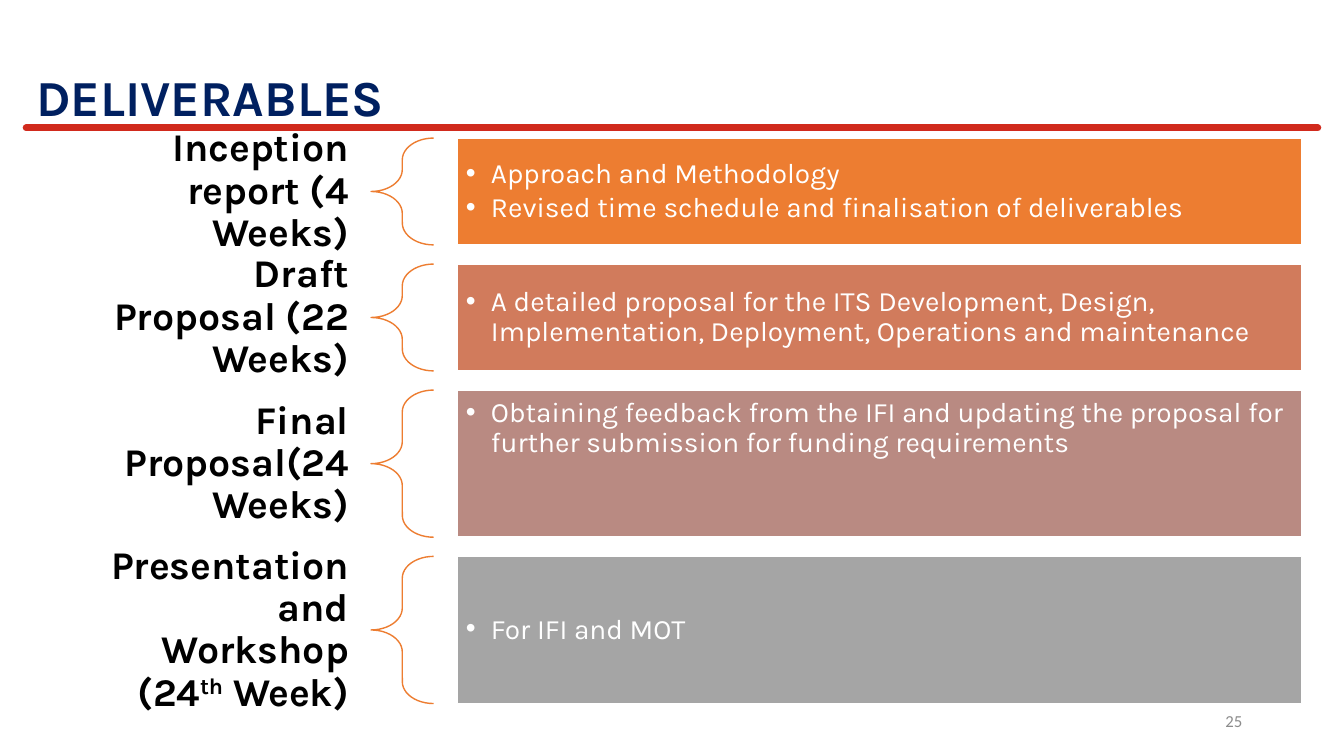
from lxml.etree import SubElement
from pptx import Presentation
from pptx.dml.color import RGBColor
from pptx.enum.shapes import MSO_CONNECTOR, MSO_SHAPE
from pptx.enum.text import MSO_ANCHOR, MSO_AUTO_SIZE, PP_ALIGN
from pptx.oxml.ns import qn
from pptx.util import Inches, Pt

ORANGE = "ED7D31"
WHITE = "FFFFFF"
GAP = 0.19
FIRST_TOP = 1.37

# Label runs as (text, superscript), bullets, fill, height, anchor
DELIVERABLES = [
    ([("Inception report (4 Weeks)", False)],
     ["Approach and Methodology",
      "Revised time schedule and finalisation of deliverables"],
     ORANGE, 1.06, MSO_ANCHOR.MIDDLE),
    ([("Draft Proposal (22 Weeks)", False)],
     ["A detailed proposal for the ITS Development, Design, "
      "Implementation, Deployment, Operations and maintenance"],
     "D17B5C", 1.06, MSO_ANCHOR.MIDDLE),
    ([("Final Proposal(24 Weeks)", False)],
     ["Obtaining feedback from the IFI and updating the proposal for "
      "further submission for funding requirements"],
     "B98A82", 1.46, MSO_ANCHOR.TOP),
    ([("Presentation and Workshop (24", False), ("th", True), (" Week)", False)],
     ["For IFI and MOT"],
     "A5A5A5", 1.46, MSO_ANCHOR.MIDDLE),
]


def color(value):
    return RGBColor.from_string(value)


def set_frame(frame, anchor, side=0.1, edge=0.05):
    frame.word_wrap = True
    frame.auto_size = MSO_AUTO_SIZE.NONE
    frame.vertical_anchor = anchor
    frame.margin_left = frame.margin_right = Inches(side)
    frame.margin_top = frame.margin_bottom = Inches(edge)


def add_span(para, text, size, hex_color, bold=False, name="Karla"):
    span = para.add_run()
    span.text = text
    span.font.name = name
    span.font.size = Pt(size)
    span.font.bold = bold
    span.font.color.rgb = color(hex_color)
    return span


def add_title(page, text):
    title = page.shapes.title
    title.left, title.top = Inches(0.26), Inches(0.44)
    title.width, title.height = Inches(12.91), Inches(0.87)
    set_frame(title.text_frame, MSO_ANCHOR.BOTTOM)
    para = title.text_frame.paragraphs[0]
    para.alignment = PP_ALIGN.LEFT
    para.line_spacing = 0.9
    add_span(para, text, 36, "002060", bold=True)


def add_rule(page):
    rule = page.shapes.add_connector(
        MSO_CONNECTOR.STRAIGHT, Inches(0.26), Inches(1.27), Inches(13.07), Inches(1.27))
    rule.line.color.rgb = color("D12A1D")
    rule.line.width = Pt(5)
    rule.line._get_or_add_ln().set("cap", "rnd")
    SubElement(rule._element.spPr, qn("a:effectLst"))


def add_label(page, top, height, spans):
    box = page.shapes.add_textbox(Inches(0.6), Inches(top), Inches(3.08), Inches(height))
    set_frame(box.text_frame, MSO_ANCHOR.MIDDLE, 0.22, 0.08)
    para = box.text_frame.paragraphs[0]
    para.alignment = PP_ALIGN.RIGHT
    para.line_spacing = 0.9
    for text, superscript in spans:
        span = add_span(para, text, 28, "000000", bold=True)
        if superscript:
            span._r.get_or_add_rPr().set("baseline", "30000")


def add_brace(page, top, height):
    brace = page.shapes.add_shape(
        MSO_SHAPE.LEFT_BRACE, Inches(3.68), Inches(top), Inches(0.62), Inches(height))
    brace.shadow.inherit = False
    brace.adjustments[0] = 0.35
    brace.fill.background()
    brace.line.color.rgb = color(ORANGE)
    brace.line.width = Pt(1)


def add_bullet(para, text):
    para.alignment = PP_ALIGN.LEFT
    para.line_spacing = 0.9
    para.space_after = Pt(3)
    para.level = 1
    properties = para._p.get_or_add_pPr()
    properties.set("marL", str(Inches(0.25)))
    properties.set("indent", str(Inches(-0.25)))
    SubElement(properties, qn("a:buFont")).set("typeface", "Arial")
    SubElement(properties, qn("a:buChar")).set("char", "•")
    add_span(para, text, 20, WHITE)


def add_panel(page, top, height, bullets, fill, anchor):
    panel = page.shapes.add_shape(
        MSO_SHAPE.RECTANGLE, Inches(4.54), Inches(top), Inches(8.37), Inches(height))
    panel.shadow.inherit = False
    panel.fill.solid()
    panel.fill.fore_color.rgb = color(fill)
    panel.line.color.rgb = color(WHITE)
    panel.line.width = Pt(1)
    frame = panel.text_frame
    set_frame(frame, anchor, 0.08, 0.08)
    for index, text in enumerate(bullets):
        para = frame.add_paragraph() if index else frame.paragraphs[0]
        add_bullet(para, text)


def add_page_number(page, number):
    box = page.shapes.add_textbox(Inches(9.42), Inches(6.95), Inches(3), Inches(0.4))
    set_frame(box.text_frame, MSO_ANCHOR.MIDDLE)
    para = box.text_frame.paragraphs[0]
    para.alignment = PP_ALIGN.RIGHT
    add_span(para, number, 12, "8C8C8C", name="Calibri")


def main():
    deck = Presentation()
    deck.slide_width, deck.slide_height = Inches(13.33), Inches(7.5)
    page = deck.slides.add_slide(deck.slide_layouts[5])

    add_title(page, "DELIVERABLES")

    # One row per deliverable
    top = FIRST_TOP
    for spans, bullets, fill, height, anchor in DELIVERABLES:
        add_label(page, top, height, spans)
        add_brace(page, top, height)
        add_panel(page, top, height, bullets, fill, anchor)
        top += height + GAP

    # Footer and title rule
    add_page_number(page, "25")
    add_rule(page)

    deck.save("out.pptx")


if __name__ == "__main__":
    main()
